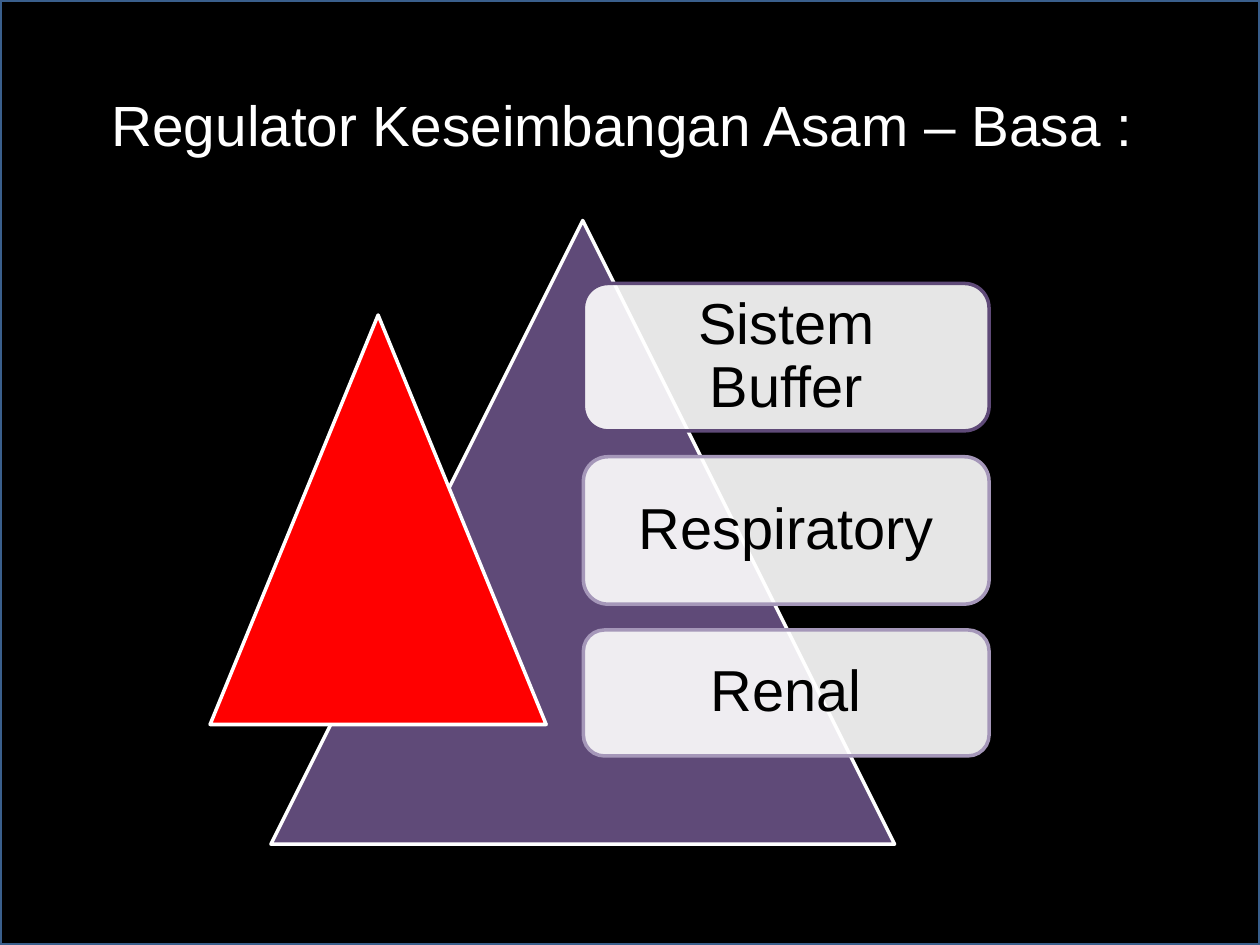
from dataclasses import dataclass

from lxml.etree import SubElement
from pptx import Presentation
from pptx.dml.color import RGBColor
from pptx.enum.shapes import MSO_SHAPE
from pptx.enum.text import MSO_ANCHOR, PP_ALIGN
from pptx.oxml.ns import qn
from pptx.util import Inches, Pt


@dataclass(frozen=True)
class Theme:
    font: str = "Arial"
    title_size: float = 32.4
    card_size: float = 33
    line_width: float = 2
    black: str = "000000"
    white: str = "FFFFFF"
    red: str = "FF0000"
    purple: str = "5F4A78"
    lilac: str = "A597B9"
    frame: str = "3A5F8C"
    card_opacity: int = 90


THEME = Theme()
COLS, ROWS = 40, 30
WIDTH, HEIGHT = Inches(10), Inches(7.5)
CARD_COL, CARD_WIDTH, CARD_TOP, CARD_GAP = 18.52, 12.88, 9, 0.82
CARDS = [
    ("Sistem Buffer", 4.68, THEME.purple),
    ("Respiratory", 4.68, THEME.lilac),
    ("Renal", 4, THEME.lilac),
]


def box(col, row, cols, rows):
    cw, rh = WIDTH / COLS, HEIGHT / ROWS
    return int(col * cw), int(row * rh), int(cols * cw), int(rows * rh)


def add_panel(s, kind, area, fill, line):
    sp = s.shapes.add_shape(kind, *box(*area))
    sp.shadow.inherit = False
    sp.fill.solid()
    sp.fill.fore_color.rgb = RGBColor.from_string(fill)
    sp.line.color.rgb = RGBColor.from_string(line)
    sp.line.width = Pt(THEME.line_width)
    return sp


def set_opacity(sp, percent):
    color = sp._element.spPr.find(qn("a:solidFill")).find(qn("a:srgbClr"))
    SubElement(color, qn("a:alpha")).set("val", str(percent * 1000))


def write_text(sp, text, size, color):
    tf = sp.text_frame
    tf.word_wrap = True
    tf.vertical_anchor = MSO_ANCHOR.MIDDLE
    p = tf.paragraphs[0]
    p.alignment = PP_ALIGN.CENTER
    r = p.add_run()
    r.text = text
    r.font.name = THEME.font
    r.font.size = Pt(size)
    r.font.color.rgb = RGBColor.from_string(color)
    return p


def add_backdrop(s):
    sp = add_panel(s, MSO_SHAPE.RECTANGLE, (0, 0, COLS, ROWS), THEME.black, THEME.frame)
    s.shapes._spTree.insert(2, sp._element)


def add_title(s, text):
    sp = s.shapes.title
    sp.left, sp.top, sp.width, sp.height = box(2, 2, 36, 3.88)
    write_text(sp, text, THEME.title_size, THEME.white)


def add_card(s, text, row, rows, line):
    area = (CARD_COL, row, CARD_WIDTH, rows)
    sp = add_panel(s, MSO_SHAPE.ROUNDED_RECTANGLE, area, THEME.white, line)
    set_opacity(sp, THEME.card_opacity)
    tf = sp.text_frame
    tf.margin_left = tf.margin_right = tf.margin_top = tf.margin_bottom = Inches(0.19)
    p = write_text(sp, text, THEME.card_size, THEME.black)
    p.line_spacing = 0.9


def add_cards(s):
    row = CARD_TOP
    for text, rows, line in CARDS:
        add_card(s, text, row, rows, line)
        row += rows + CARD_GAP


def main():
    prs = Presentation()
    prs.slide_width, prs.slide_height = WIDTH, HEIGHT
    s = prs.slides.add_slide(prs.slide_layouts[5])
    add_backdrop(s)
    add_title(s, "Regulator Keseimbangan Asam – Basa : ")
    triangle = MSO_SHAPE.ISOSCELES_TRIANGLE
    add_panel(s, triangle, (8.6, 7, 19.8, 19.8), THEME.purple, THEME.white)
    add_cards(s)
    add_panel(s, triangle, (6.67, 10, 10.67, 13), THEME.red, THEME.white)
    prs.save("out.pptx")


if __name__ == "__main__":
    main()
